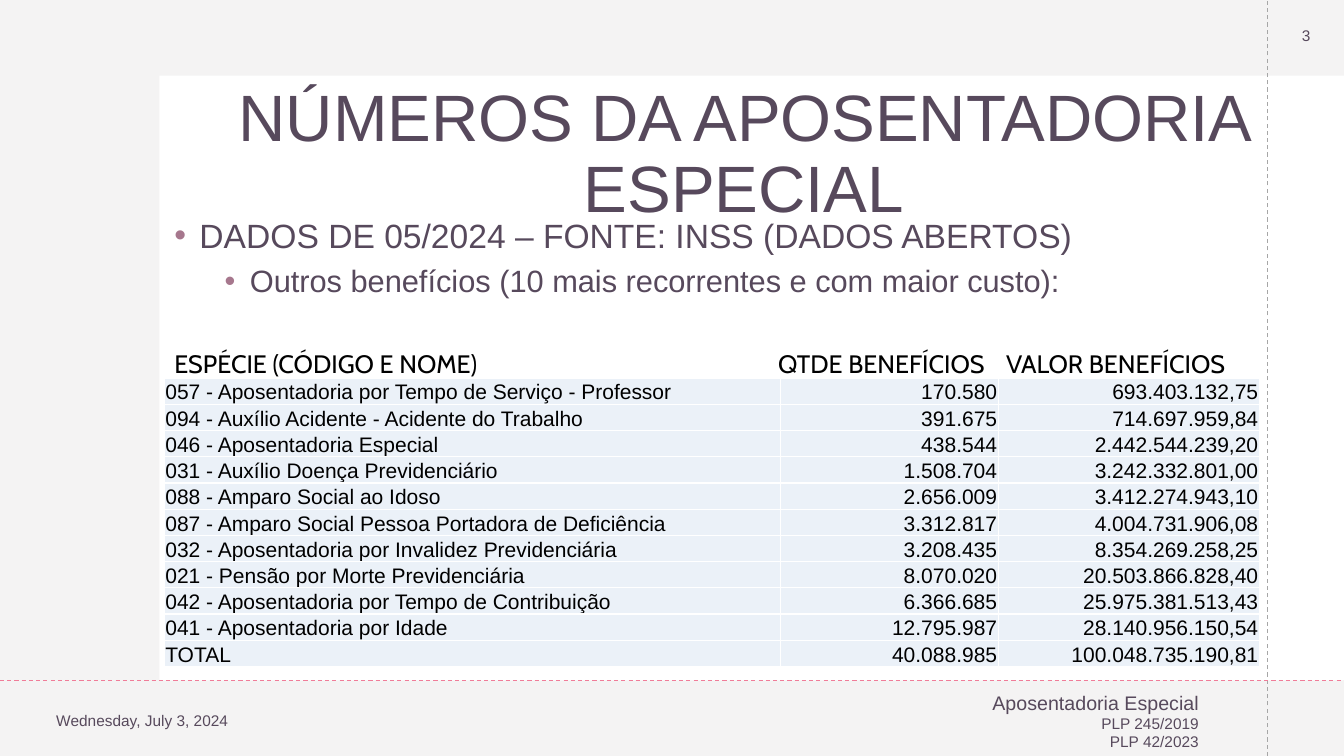
from dataclasses import dataclass

from lxml import etree
from pptx import Presentation
from pptx import util as u
from pptx.dml.color import RGBColor
from pptx.enum import dml, shapes, text
from pptx.oxml import ns

Inches = u.Inches
LEFT, CENTER, RIGHT = text.PP_ALIGN.LEFT, text.PP_ALIGN.CENTER, text.PP_ALIGN.RIGHT


@dataclass(frozen=True)
class Theme:
    backdrop: str = "E7E6E6"
    panel: str = "FFFFFF"
    ink: str = "57495C"
    bullet: str = "A6778D"
    rule: str = "F07C98"
    margin_rule: str = "A6A6A6"
    cell: str = "EBF1F8"
    cell_ink: str = "000000"
    font: str = "Arial"
    header_font: str = "Cabin"
    title_size: float = 46.8
    body_size: float = 24
    sub_size: float = 22
    header_size: float = 18
    cell_size: float = 15
    footer_size: float = 14
    small_size: float = 11


THEME = Theme()

BENEFITS = [
    ("057 - Aposentadoria por Tempo de Serviço - Professor", "170.580", "693.403.132,75"),
    ("094 - Auxílio Acidente - Acidente do Trabalho", "391.675", "714.697.959,84"),
    ("046 - Aposentadoria Especial", "438.544", "2.442.544.239,20"),
    ("031 - Auxílio Doença Previdenciário", "1.508.704", "3.242.332.801,00"),
    ("088 - Amparo Social ao Idoso", "2.656.009", "3.412.274.943,10"),
    ("087 - Amparo Social Pessoa Portadora de Deficiência", "3.312.817", "4.004.731.906,08"),
    ("032 - Aposentadoria por Invalidez Previdenciária", "3.208.435", "8.354.269.258,25"),
    ("021 - Pensão por Morte Previdenciária", "8.070.020", "20.503.866.828,40"),
    ("042 - Aposentadoria por Tempo de Contribuição", "6.366.685", "25.975.381.513,43"),
    ("041 - Aposentadoria por Idade", "12.795.987", "28.140.956.150,54"),
    ("TOTAL", "40.088.985", "100.048.735.190,81"),
]


def color(value):
    return RGBColor.from_string(value)


def add_run(paragraph, words, size, ink=THEME.ink, font=THEME.font):
    run = paragraph.add_run()
    run.text = words
    run.font.size = u.Pt(size)
    run.font.name = font
    run.font.color.rgb = color(ink)


def add_panel(slide, box, fill, opacity=100):
    shape = slide.shapes.add_shape(shapes.MSO_SHAPE.RECTANGLE, *map(Inches, box))
    shape.shadow.inherit = False
    shape.fill.solid()
    shape.fill.fore_color.rgb = color(fill)
    shape.line.fill.background()
    if opacity < 100:
        fill_color = shape._element.spPr.find(".//" + ns.qn("a:srgbClr"))
        etree.SubElement(fill_color, ns.qn("a:alpha"), val=str(opacity * 1000))


def add_dashed_line(slide, ends, ink):
    line = slide.shapes.add_connector(shapes.MSO_CONNECTOR.STRAIGHT, *map(Inches, ends))
    line.line.color.rgb = color(ink)
    line.line.width = u.Pt(0.75)
    line.line.dash_style = dml.MSO_LINE.DASH
    etree.SubElement(line._element.spPr, ns.qn("a:effectLst"))


def add_text(slide, box, lines, align=LEFT, anchor=text.MSO_ANCHOR.MIDDLE, **style):
    frame = slide.shapes.add_textbox(*map(Inches, box)).text_frame
    frame.word_wrap = True
    frame.vertical_anchor = anchor
    for index, (words, size) in enumerate(lines):
        paragraph = frame.add_paragraph() if index else frame.paragraphs[0]
        paragraph.alignment = align
        add_run(paragraph, words, size, **style)
    return frame


def set_title(slide, words):
    title = slide.shapes.title
    title.left, title.top, title.width, title.height = map(Inches, (1.63, 0.82, 11.5, 1.45))
    frame = title.text_frame
    frame.word_wrap = True
    frame.auto_size = text.MSO_AUTO_SIZE.NONE
    frame.vertical_anchor = text.MSO_ANCHOR.MIDDLE
    paragraph = frame.paragraphs[0]
    paragraph.alignment = CENTER
    paragraph.line_spacing = 0.9
    add_run(paragraph, words, THEME.title_size)
    slide.shapes._spTree.append(title._element)


def set_bullet(paragraph, level, space_before):
    paragraph.level = level
    paragraph.space_before = u.Pt(space_before)
    properties = paragraph._p.get_or_add_pPr()
    properties.set("marL", str(Inches(0.25 + 0.5 * level)))
    properties.set("indent", str(Inches(-0.25)))
    bullet_color = etree.SubElement(properties, ns.qn("a:buClr"))
    etree.SubElement(bullet_color, ns.qn("a:srgbClr"), val=THEME.bullet)
    etree.SubElement(properties, ns.qn("a:buFont"), typeface=THEME.font)
    etree.SubElement(properties, ns.qn("a:buChar"), char="•")


def add_bullets(slide):
    frame = add_text(slide, (1.63, 2.08, 10.95, 1.2), [
        ("DADOS DE 05/2024 – FONTE: INSS (DADOS ABERTOS)", THEME.body_size),
        ("Outros benefícios (10 mais recorrentes e com maior custo):", THEME.sub_size),
    ], anchor=text.MSO_ANCHOR.TOP)
    for level, paragraph in enumerate(frame.paragraphs):
        set_bullet(paragraph, level, 10 - 5 * level)


def add_table_header(slide):
    labels = ("ESPÉCIE (CÓDIGO E NOME)", "QTDE BENEFÍCIOS", "VALOR BENEFÍCIOS")
    frame = add_text(slide, (1.63, 3.41, 10.85, 0.4), [("\t".join(labels), THEME.header_size)],
                     anchor=text.MSO_ANCHOR.TOP, ink=THEME.cell_ink, font=THEME.header_font)
    properties = frame.paragraphs[0]._p.get_or_add_pPr()
    tabs = etree.SubElement(properties, ns.qn("a:tabLst"))
    for position in (5.99, 8.25):
        etree.SubElement(tabs, ns.qn("a:tab"), pos=str(Inches(position)), algn="l")


def fill_cell(cell, words, align):
    cell.fill.solid()
    cell.fill.fore_color.rgb = color(THEME.cell)
    cell.margin_left = cell.margin_right = cell.margin_top = Inches(0.01)
    cell.margin_bottom = 0
    cell.vertical_anchor = text.MSO_ANCHOR.BOTTOM
    paragraph = cell.text_frame.paragraphs[0]
    paragraph.alignment = align
    add_run(paragraph, words, THEME.cell_size, THEME.cell_ink)


def add_benefits_table(slide):
    row_height = 0.24
    frame = slide.shapes.add_table(len(BENEFITS), 3, Inches(1.63), Inches(3.75),
                                   Inches(10.86), Inches(row_height * len(BENEFITS)))
    table = frame.table
    table.first_row = False
    table.horz_banding = False
    for column, width in zip(table.columns, (6.11, 2.16, 2.59)):
        column.width = Inches(width)
    for row, benefit in zip(table.rows, BENEFITS):
        row.height = Inches(row_height)
        for cell, words, align in zip(row.cells, benefit, (LEFT, RIGHT, RIGHT)):
            fill_cell(cell, words, align)


def main():
    presentation = Presentation()
    presentation.slide_width = Inches(13.33)
    presentation.slide_height = Inches(7.5)
    slide = presentation.slides.add_slide(presentation.slide_layouts[5])

    add_panel(slide, (0, 0, 13.33, 7.5), THEME.backdrop, opacity=45)
    add_panel(slide, (1.58, 0.75, 11.75, 6), THEME.panel)
    add_dashed_line(slide, (12.57, 7.5, 12.57, 0), THEME.margin_rule)
    add_dashed_line(slide, (0, 6.75, 13.33, 6.75), THEME.rule)
    set_title(slide, "NÚMEROS DA APOSENTADORIA ESPECIAL")
    add_bullets(slide)
    add_text(slide, (0.46, 6.8, 3, 0.7), [("Wednesday, July 3, 2024", THEME.small_size)])
    add_text(slide, (4.12, 6.8, 7.87, 0.7), [
        ("Aposentadoria Especial", THEME.footer_size),
        ("PLP 245/2019", THEME.small_size),
        ("PLP 42/2023", THEME.small_size),
    ], align=RIGHT)
    add_text(slide, (12.58, -0.02, 0.75, 0.75), [("3", THEME.small_size)], align=CENTER)
    add_benefits_table(slide)
    add_table_header(slide)
    presentation.save("out.pptx")


if __name__ == "__main__":
    main()
